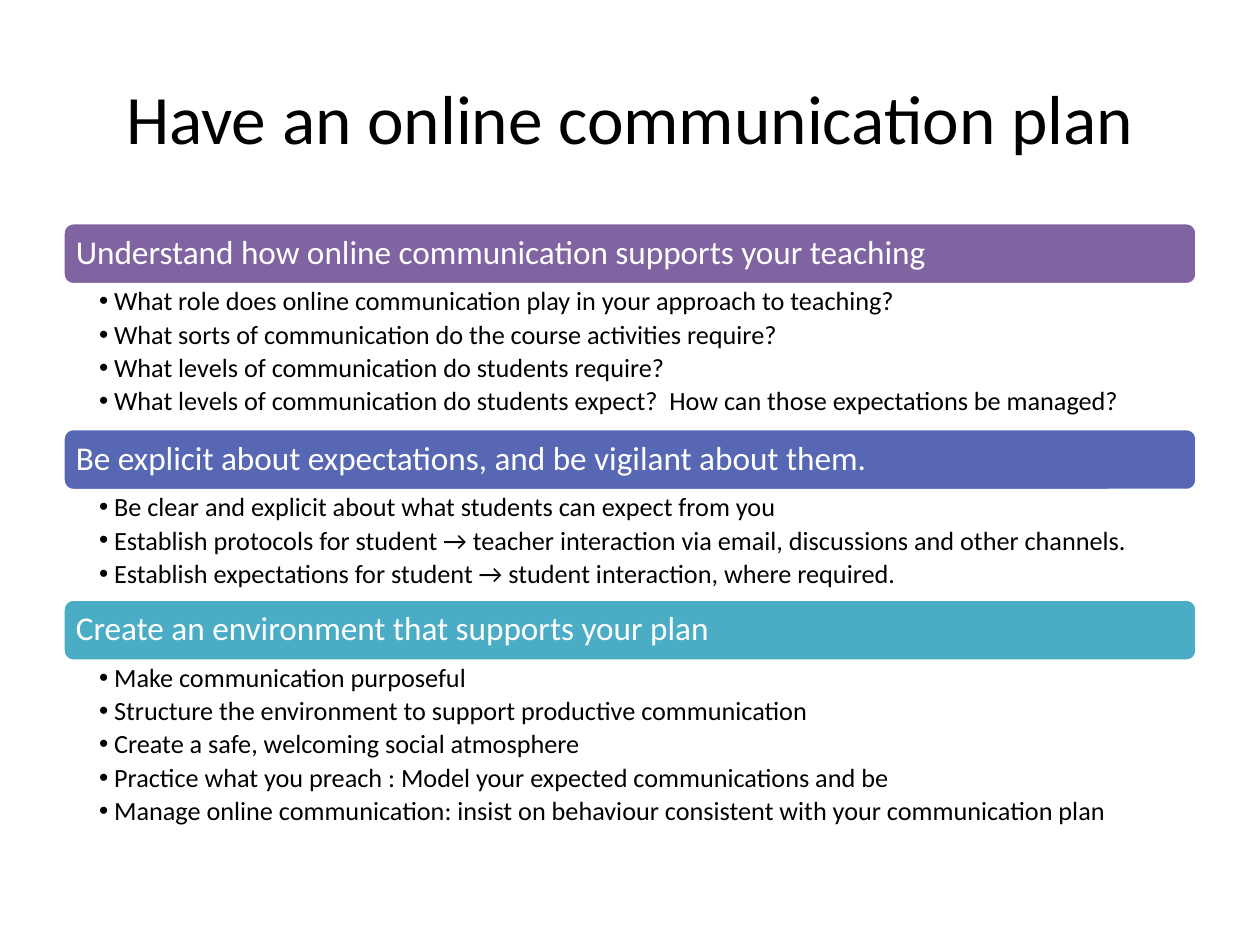
"""Build a slide with a communication plan in three headed lists."""
from lxml import etree
from pptx import Presentation
from pptx import util as u
from pptx.dml.color import RGBColor
from pptx.enum import shapes, text
from pptx.oxml.ns import qn

TITLE = "Have an online communication plan"
SECTIONS = [
    ("Understand how online communication supports your teaching", "8064A2", [
        "What role does online communication play in your approach to teaching?",
        "What sorts of communication do the course activities require?",
        "What levels of communication do students require?",
        "What levels of communication do students expect?  How can those expectations be managed?",
    ]),
    ("Be explicit about expectations, and be vigilant about them.", "5767B4", [
        "Be clear and explicit about what students can expect from you",
        "Establish protocols for student → teacher interaction via email, discussions and other channels.",
        "Establish expectations for student → student interaction, where required.",
    ]),
    ("Create an environment that supports your plan", "4BACC6", [
        "Make communication purposeful",
        "Structure the environment to support productive communication",
        "Create a safe, welcoming social atmosphere",
        "Practice what you preach : Model your expected communications and be",
        "Manage online communication: insist on behaviour consistent with your communication plan",
    ]),
]
LEFT, WIDTH = 1.27, 22.86
SECTIONS_TOP, BAND_HEIGHT = 4.49, 1.25
LIST_PADDING, ITEM_HEIGHT = 0.06, 0.71


def rgb(value):
    return RGBColor.from_string(value)


def place(part, top, height):
    part.left, part.top, part.width, part.height = (
        u.Cm(length) for length in (LEFT, top, WIDTH, height))


def add_bullet(paragraph):
    properties = paragraph._p.get_or_add_pPr()
    properties.set("marL", str(u.Cm(0.3)))
    properties.set("indent", str(-u.Cm(0.3)))
    etree.SubElement(properties, qn("a:buFont"), typeface="Arial")
    etree.SubElement(properties, qn("a:buChar"), char="•")


def write(part, lines, size, color="000000", anchor=text.MSO_ANCHOR.MIDDLE,
          align=text.PP_ALIGN.LEFT, insets=(0.2, 0.2, 0.2, 0.2),
          spacing=0.9, after=0, bullets=False):
    frame = part.text_frame
    frame.text = "\n".join(lines)
    frame.word_wrap = True
    frame.auto_size = text.MSO_AUTO_SIZE.NONE
    frame.vertical_anchor = anchor
    frame.margin_left, frame.margin_top, frame.margin_right, frame.margin_bottom = (
        u.Cm(inset) for inset in insets)
    for paragraph in frame.paragraphs:
        paragraph.alignment = align
        paragraph.line_spacing = spacing
        paragraph.space_before, paragraph.space_after = u.Pt(0), u.Pt(after)
        font = paragraph.runs[0].font
        font.name, font.size, font.bold = "Calibri", u.Pt(size), False
        font.color.rgb = rgb(color)
        if bullets:
            paragraph.level = 1
            add_bullet(paragraph)


def add_band(slide, heading, color, top):
    band = slide.shapes.add_shape(shapes.MSO_SHAPE.ROUNDED_RECTANGLE, 0, 0, 0, 0)
    place(band, top, BAND_HEIGHT)
    band.shadow.inherit = False
    band.fill.solid()
    band.fill.fore_color.rgb = rgb(color)
    band.line.color.rgb = rgb("FFFFFF")
    band.line.width = u.Pt(2)
    write(band, [heading], 19, color="FFFFFF")


def main():
    presentation = Presentation()
    presentation.slide_width, presentation.slide_height = u.Cm(25.4), u.Cm(19.05)
    comparison = presentation.slide_layouts.get_by_name("Comparison")
    slide = presentation.slides.add_slide(comparison)
    title, *bodies = slide.placeholders
    place(title, 0.76, 3.18)
    write(title, [TITLE], 39.6, align=text.PP_ALIGN.CENTER, spacing=1.0)

    top = SECTIONS_TOP
    for (heading, color, items), body in zip(SECTIONS, bodies):
        add_band(slide, heading, color, top)
        top += BAND_HEIGHT
        height = LIST_PADDING + ITEM_HEIGHT * len(items)
        place(body, top, height)
        write(body, items, 15, anchor=text.MSO_ANCHOR.TOP,
              insets=(0.73, 0.07, 0.38, 0.07), after=2.8, bullets=True)
        top += height

    for unused in list(slide.placeholders):
        if not unused.text_frame.text:
            unused.element.getparent().remove(unused.element)
    presentation.save("out.pptx")


if __name__ == "__main__":
    main()
